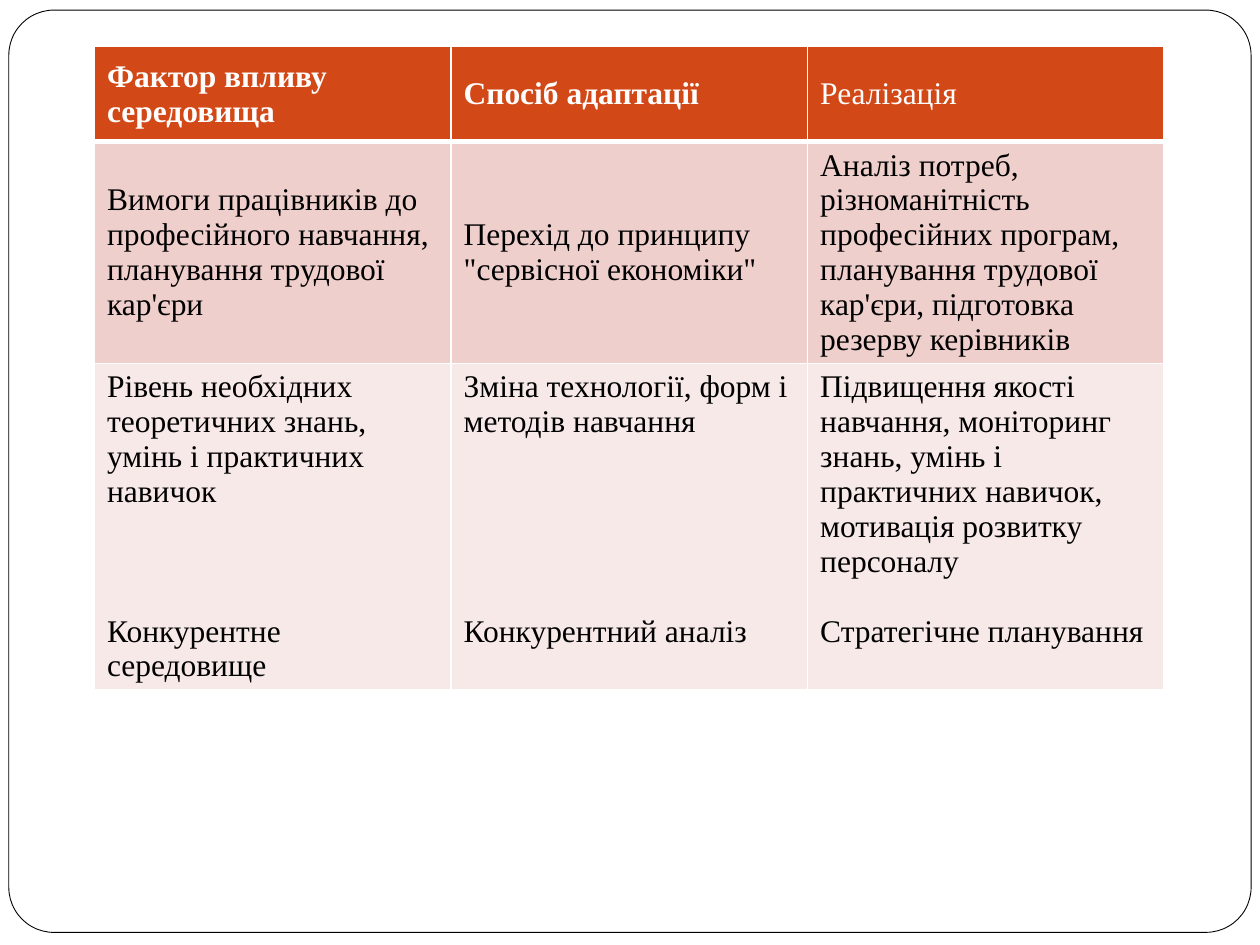
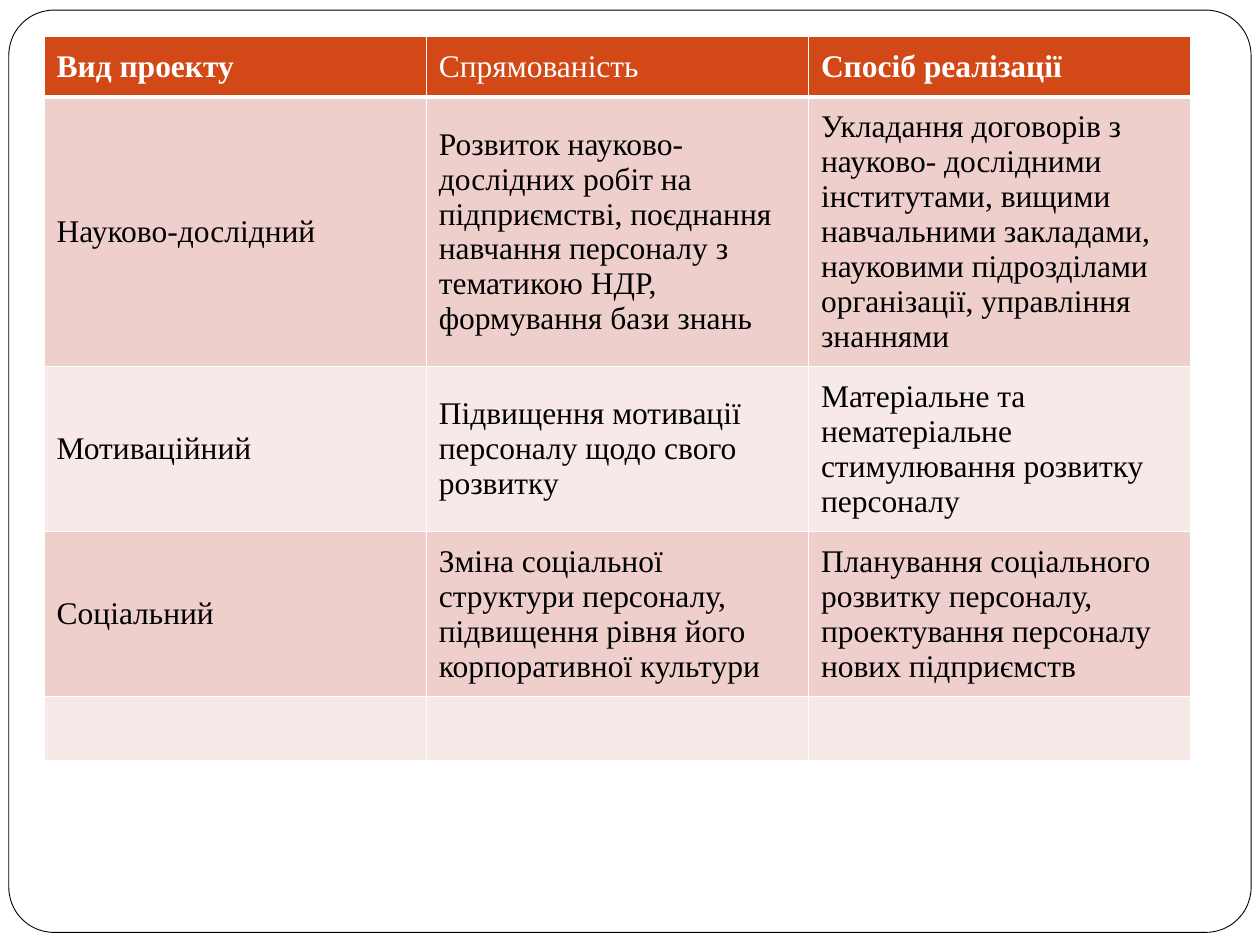
from lxml import etree
from pptx import Presentation
from pptx.dml.color import RGBColor
from pptx.enum import shapes, text
from pptx.oxml import ns
from pptx.util import Inches, Pt

WHITE = RGBColor(0xFF, 0xFF, 0xFF)
BLACK = RGBColor(0x00, 0x00, 0x00)
ORANGE = RGBColor(0xD3, 0x48, 0x17)
BANDS = (RGBColor(0xEF, 0xCF, 0xCC), RGBColor(0xF7, 0xE9, 0xE8))

FONT = "Times New Roman"
TEXT_SIZE = 18
LINE_PITCH = 1.107 * TEXT_SIZE  # height of one text line, in points
FRAME_BOX = (0.07, 0.08, 9.86, 7.32)

# A header is (text, bold). A cell is its text, or a list of
# (text, number of lines left free above it) set from the top of the cell.
ADAPTATION = {
    "box": (0.75, 0.37, 8.49),
    "heights": (0.75, 1.76, 2.59),
    "headers": (("Фактор впливу середовища", True),
                ("Спосіб адаптації", True),
                ("Реалізація", False)),
    "rows": (
        ("Вимоги працівників до професійного навчання, планування трудової кар'єри",
         "Перехід до принципу \"сервісної економіки\"",
         [("Аналіз потреб, різноманітність професійних програм, планування "
           "трудової кар'єри, підготовка резерву керівників", 0)]),
        ([("Рівень необхідних теоретичних знань, умінь і практичних навичок", 0),
          ("Конкурентне середовище", 3)],
         [("Зміна технології, форм і методів навчання", 0),
          ("Конкурентний аналіз", 5)],
         [("Підвищення якості навчання, моніторинг знань, умінь і практичних "
           "навичок, мотивація розвитку персоналу", 0),
          ("Стратегічне планування", 1)]),
    ),
}

PROJECTS = {
    "box": (0.35, 0.29, 9.1),
    "heights": (0.48, 2.14, 1.31, 1.31, 0.48),
    "headers": (("Вид проекту", True),
                ("Спрямованість", False),
                ("Спосіб реалізації", True)),
    "rows": (
        ("Науково-дослідний",
         "Розвиток науково-дослідних робіт на підприємстві, поєднання навчання "
         "персоналу з тематикою НДР, формування бази знань",
         "Укладання договорів з науково- дослідними інститутами, вищими навчальними "
         "закладами, науковими підрозділами організації, управління знаннями"),
        ("Мотиваційний",
         "Підвищення мотивації персоналу щодо свого розвитку",
         "Матеріальне та нематеріальне стимулювання розвитку персоналу"),
        ("Соціальний",
         "Зміна соціальної структури персоналу, підвищення рівня його "
         "корпоративної культури",
         "Планування соціального розвитку персоналу, проектування персоналу "
         "нових підприємств"),
        ("", "", ""),
    ),
}


def add_frame(slide, box):
    sp = slide.shapes.add_shape(shapes.MSO_SHAPE.ROUNDED_RECTANGLE,
                                *(Inches(v) for v in box))
    sp.adjustments[0] = 0.049
    sp.shadow.inherit = False
    sp.fill.solid()
    sp.fill.fore_color.rgb = WHITE
    sp.line.color.rgb = BLACK
    sp.line.width = Pt(0.5)


def set_borders(cell, top, bottom):
    """Give the cell white borders: 1 pt at the sides, given widths above and below."""
    tc_pr = cell._tc.get_or_add_tcPr()
    sides = (("a:lnL", 1), ("a:lnR", 1), ("a:lnT", top), ("a:lnB", bottom))
    for i, (tag, width) in enumerate(sides):
        ln = etree.Element(ns.qn(tag), w=str(Pt(width)))
        fill = etree.SubElement(ln, ns.qn("a:solidFill"))
        etree.SubElement(fill, ns.qn("a:srgbClr"), val=str(WHITE))
        tc_pr.insert(i, ln)


def fill_cell(cell, content, fill, color, bold=False):
    cell.fill.solid()
    cell.fill.fore_color.rgb = fill
    if isinstance(content, str):
        cell.vertical_anchor = text.MSO_ANCHOR.MIDDLE
        cell.margin_top = cell.margin_bottom = Inches(0.1)
        content = [(content, 0)]
    tf = cell.text_frame
    for i, (words, free_lines) in enumerate(content):
        p = tf.add_paragraph() if i else tf.paragraphs[0]
        p.space_before = Pt(free_lines * LINE_PITCH)
        p.font.size = Pt(TEXT_SIZE)
        if not words:
            continue
        r = p.add_run()
        r.text = words
        r.font.name = FONT
        r.font.size = Pt(TEXT_SIZE)
        r.font.bold = bold
        r.font.color.rgb = color


def add_banded_table(slide, box, heights, headers, rows):
    left, top, width = box
    table = slide.shapes.add_table(len(heights), len(headers), Inches(left), Inches(top),
                                   Inches(width), Inches(sum(heights))).table
    table.first_row = table.horz_banding = False
    for column in table.columns:
        column.width = Inches(width / len(headers))
    for row, height in zip(table.rows, heights):
        row.height = Inches(height)
    for c, (title, bold) in enumerate(headers):
        cell = table.cell(0, c)
        fill_cell(cell, title, ORANGE, WHITE, bold)
        set_borders(cell, 1, 3)
    for r, contents in enumerate(rows):
        for c, content in enumerate(contents):
            cell = table.cell(r + 1, c)
            fill_cell(cell, content, BANDS[r % 2], BLACK)
            set_borders(cell, 1 if r else 3, 1)


def add_table_slide(prs, content):
    slide = prs.slides.add_slide(prs.slide_layouts[6])
    add_frame(slide, FRAME_BOX)
    add_banded_table(slide, **content)


def main():
    prs = Presentation()
    prs.slide_width, prs.slide_height = Inches(10), Inches(7.5)
    for content in (ADAPTATION, PROJECTS):
        add_table_slide(prs, content)
    prs.save("out.pptx")


if __name__ == "__main__":
    main()
